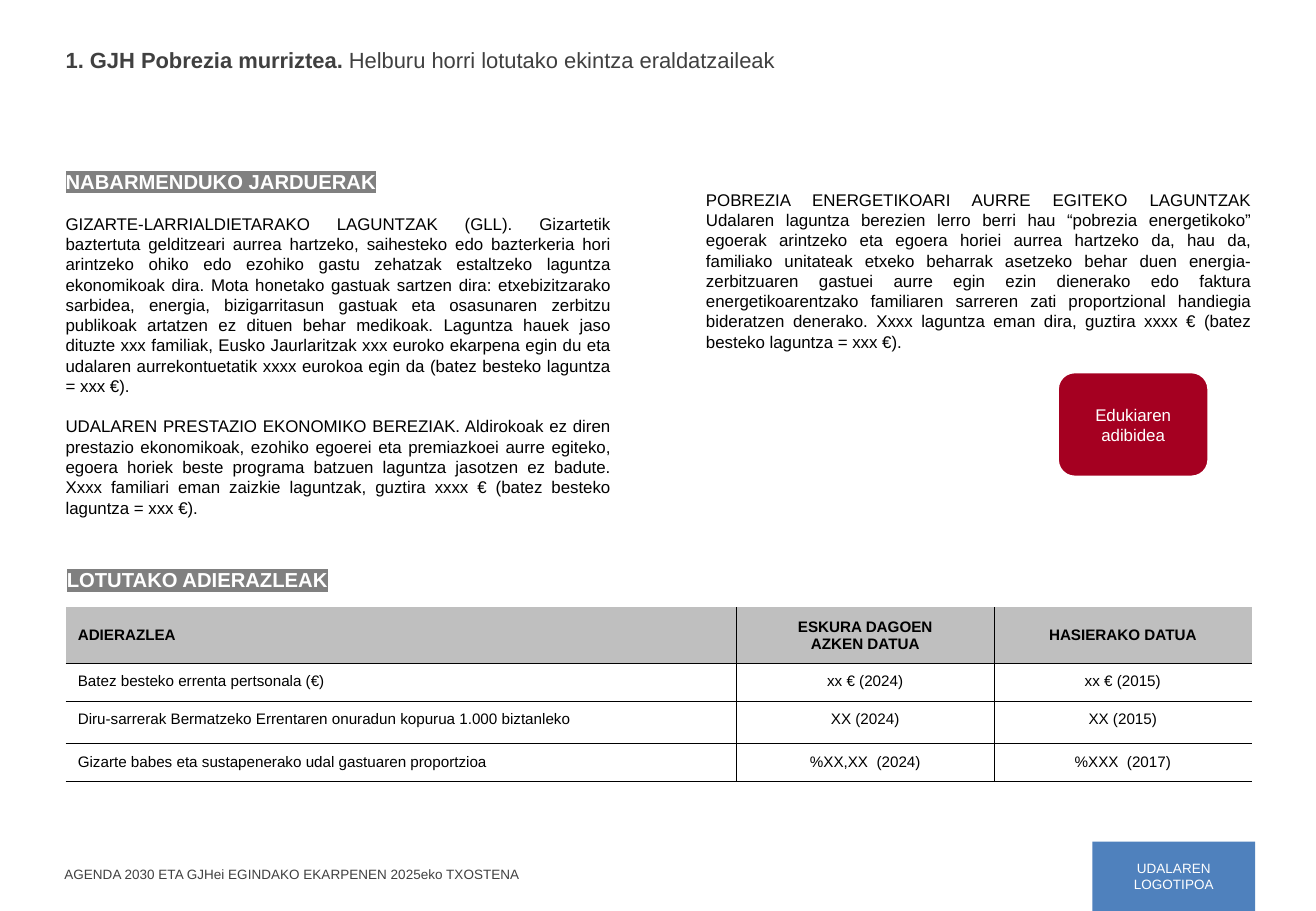
import dataclasses

import pptx
import pptx.dml.color
import pptx.enum.shapes
import pptx.enum.text
import pptx.oxml.ns
import pptx.util
from lxml import etree

Inches = pptx.util.Inches
Align = pptx.enum.text.PP_ALIGN
Anchor = pptx.enum.text.MSO_ANCHOR
Shape = pptx.enum.shapes.MSO_SHAPE
qn = pptx.oxml.ns.qn


@dataclasses.dataclass(frozen=True)
class Theme:
    font: str = "Arial"
    black: str = "000000"
    white: str = "FFFFFF"
    dark_grey: str = "404040"
    highlight: str = "808080"
    header: str = "BFBFBF"
    red: str = "A50021"
    blue: str = "4F81BD"
    title_size: int = 13
    heading_size: int = 12
    body_size: int = 10
    table_size: int = 9
    small_size: int = 8
    rule_width: float = 0.25


THEME = Theme()
NO_GRID_STYLE = "{2D5ABB26-0587-4C30-8999-92F81FD0307C}"
LEFT = 0.54
COLUMN_WIDTH = 4.48
COLUMN_GAP = 0.79

EMERGENCY_AID = (
    "GIZARTE-LARRIALDIETARAKO LAGUNTZAK (GLL). Gizartetik baztertuta gelditzeari aurrea "
    "hartzeko, saihesteko edo bazterkeria hori arintzeko ohiko edo ezohiko gastu zehatzak "
    "estaltzeko laguntza ekonomikoak dira. Mota honetako gastuak sartzen dira: "
    "etxebizitzarako sarbidea, energia, bizigarritasun gastuak eta osasunaren zerbitzu "
    "publikoak artatzen ez dituen behar medikoak. Laguntza hauek jaso dituzte xxx familiak, "
    "Eusko Jaurlaritzak xxx euroko ekarpena egin du eta udalaren aurrekontuetatik xxxx "
    "eurokoa egin da (batez besteko laguntza = xxx €).")
SPECIAL_BENEFITS = (
    "UDALAREN PRESTAZIO EKONOMIKO BEREZIAK. Aldirokoak ez diren prestazio ekonomikoak, "
    "ezohiko egoerei eta premiazkoei aurre egiteko, egoera horiek beste programa batzuen "
    "laguntza jasotzen ez badute. Xxxx familiari eman zaizkie laguntzak, guztira xxxx € "
    "(batez besteko laguntza = xxx €).")
ENERGY_AID = (
    "POBREZIA ENERGETIKOARI AURRE EGITEKO LAGUNTZAK Udalaren laguntza berezien lerro berri "
    "hau “pobrezia energetikoko” egoerak arintzeko eta egoera horiei aurrea hartzeko da, "
    "hau da, familiako unitateak etxeko beharrak asetzeko behar duen energia-zerbitzuaren "
    "gastuei aurre egin ezin dienerako edo faktura energetikoarentzako familiaren sarreren "
    "zati proportzional handiegia bideratzen denerako. Xxxx laguntza eman dira, guztira "
    "xxxx € (batez besteko laguntza = xxx €).")

INDICATORS = [
    ["ADIERAZLEA", "ESKURA DAGOEN\nAZKEN DATUA", "HASIERAKO DATUA"],
    ["Batez besteko errenta pertsonala (€)", "xx € (2024)", "xx € (2015)"],
    ["Diru-sarrerak Bermatzeko Errentaren onuradun kopurua 1.000 biztanleko",
     "XX (2024)", "XX (2015)"],
    ["Gizarte babes eta sustapenerako udal gastuaren proportzioa",
     "%XX,XX  (2024)", "%XXX  (2017)"],
]
INDICATOR_WIDTHS = [5.52, 2.12, 2.12]
INDICATOR_HEIGHTS = [0.46, 0.31, 0.35, 0.31]


def rgb(color):
    return pptx.dml.color.RGBColor.from_string(color)


def style_paragraph(para, size, color, bold=False, align=Align.LEFT):
    para.alignment = align
    for span in para.runs:
        span.font.name = THEME.font
        span.font.size = pptx.util.Pt(size)
        span.font.bold = bold
        span.font.color.rgb = rgb(color)


def add_text(page, place, texts, size, color, align=Align.LEFT, gap=0):
    """Text box without insets; gap is the space before each later paragraph."""
    box = page.shapes.add_textbox(*map(Inches, place))
    frame = box.text_frame
    frame.word_wrap = True
    frame.margin_left = frame.margin_right = frame.margin_top = frame.margin_bottom = 0
    frame.text = "\n".join(texts)
    for index, para in enumerate(frame.paragraphs):
        style_paragraph(para, size, color, align=align)
        if index and gap:
            para.space_before = pptx.util.Pt(gap)
    return box


def style_heading(para):
    """White bold text on a grey highlight."""
    style_paragraph(para, THEME.heading_size, THEME.white, bold=True)
    for span in para.runs:
        fill = span.font._element.find(qn("a:solidFill"))
        mark = etree.Element(qn("a:highlight"))
        etree.SubElement(mark, qn("a:srgbClr"), val=THEME.highlight)
        fill.addnext(mark)


def add_label(page, kind, place, text, size, fill, line=None):
    shape = page.shapes.add_shape(kind, *map(Inches, place))
    shape.shadow.inherit = False
    shape.fill.solid()
    shape.fill.fore_color.rgb = rgb(fill)
    if line:
        shape.line.color.rgb = rgb(line)
        shape.line.width = pptx.util.Pt(2)
    else:
        shape.line.fill.background()
    frame = shape.text_frame
    frame.word_wrap = True
    frame.vertical_anchor = Anchor.MIDDLE
    frame.text = text
    style_paragraph(frame.paragraphs[0], size, THEME.white, align=Align.CENTER)


def add_borders(cell, sides):
    properties = cell._tc.get_or_add_tcPr()
    for index, side in enumerate(sides):
        width = str(pptx.util.Pt(THEME.rule_width))
        line = etree.Element(qn("a:ln" + side), w=width)
        fill = etree.SubElement(line, qn("a:solidFill"))
        etree.SubElement(fill, qn("a:srgbClr"), val=THEME.black)
        properties.insert(index, line)


def add_indicator_table(page, left, top):
    frame = page.shapes.add_table(
        len(INDICATORS), len(INDICATOR_WIDTHS), Inches(left), Inches(top),
        Inches(sum(INDICATOR_WIDTHS)), Inches(sum(INDICATOR_HEIGHTS)))
    table = frame.table
    table.horz_banding = False
    table._tbl.tblPr.find(qn("a:tableStyleId")).text = NO_GRID_STYLE
    for column, width in zip(table.columns, INDICATOR_WIDTHS):
        column.width = Inches(width)
    last_row, last_column = len(INDICATORS) - 1, len(INDICATOR_WIDTHS) - 1
    for r, texts in enumerate(INDICATORS):
        table.rows[r].height = Inches(INDICATOR_HEIGHTS[r])
        for c, text in enumerate(texts):
            cell = table.cell(r, c)
            cell.margin_left = cell.margin_right = Inches(0.1)
            cell.margin_top = cell.margin_bottom = Inches(0.08)
            cell.vertical_anchor = Anchor.TOP if r else Anchor.MIDDLE
            cell.text_frame.text = text
            for para in cell.text_frame.paragraphs:
                style_paragraph(para, THEME.table_size, THEME.black, bold=r == 0,
                                align=Align.CENTER if c else Align.LEFT)
            if r == 0:
                cell.fill.solid()
                cell.fill.fore_color.rgb = rgb(THEME.header)
            else:
                cell.fill.background()
            # Rules: left, right, top, bottom; the outer sides and the top stay open
            sides = [("L", c > 0), ("R", c < last_column), ("T", r > 0), ("B", r <= last_row)]
            add_borders(cell, [side for side, shown in sides if shown])


def main():
    deck = pptx.Presentation()
    deck.slide_width, deck.slide_height = Inches(10.83), Inches(7.5)
    page = deck.slides.add_slide(deck.slide_layouts[6])

    # Footer
    add_label(page, Shape.RECTANGLE, (8.99, 6.93, 1.34, 0.57), "UDALAREN LOGOTIPOA",
              THEME.small_size, THEME.blue)
    add_text(page, (0.53, 7.13, 5.42, 0.13),
             ["AGENDA 2030 ETA GJHei EGINDAKO EKARPENEN 2025eko TXOSTENA"],
             THEME.small_size, THEME.dark_grey)

    # Title: bold goal, then regular text
    title = add_text(page, (LEFT, 0.38, 8.27, 0.22), ["1. GJH Pobrezia murriztea. "],
                     THEME.title_size, THEME.dark_grey)
    para = title.text_frame.paragraphs[0]
    para.add_run().text = "Helburu horri lotutako ekintza eraldatzaileak"
    style_paragraph(para, THEME.title_size, THEME.dark_grey)
    para.runs[0].font.bold = True

    # Activities in two columns
    activities = add_text(page, (LEFT, 1.39, COLUMN_WIDTH, 2.91),
                          ["NABARMENDUKO JARDUERAK", EMERGENCY_AID, SPECIAL_BENEFITS],
                          THEME.body_size, THEME.black, Align.JUSTIFY, gap=12)
    style_heading(activities.text_frame.paragraphs[0])
    add_text(page, (LEFT + COLUMN_WIDTH + COLUMN_GAP, 1.56, COLUMN_WIDTH, 1.4),
             [ENERGY_AID], THEME.body_size, THEME.black, Align.JUSTIFY)

    # Indicators
    add_indicator_table(page, LEFT, 5)
    add_label(page, Shape.ROUNDED_RECTANGLE, (8.7, 3.06, 1.25, 0.87), "Edukiaren adibidea",
              THEME.body_size, THEME.red, line=THEME.white)
    heading = add_text(page, (0.55, 4.67, 4.45, 0.2), ["LOTUTAKO ADIERAZLEAK"],
                       THEME.heading_size, THEME.white)
    style_heading(heading.text_frame.paragraphs[0])

    deck.save("out.pptx")


if __name__ == "__main__":
    main()
